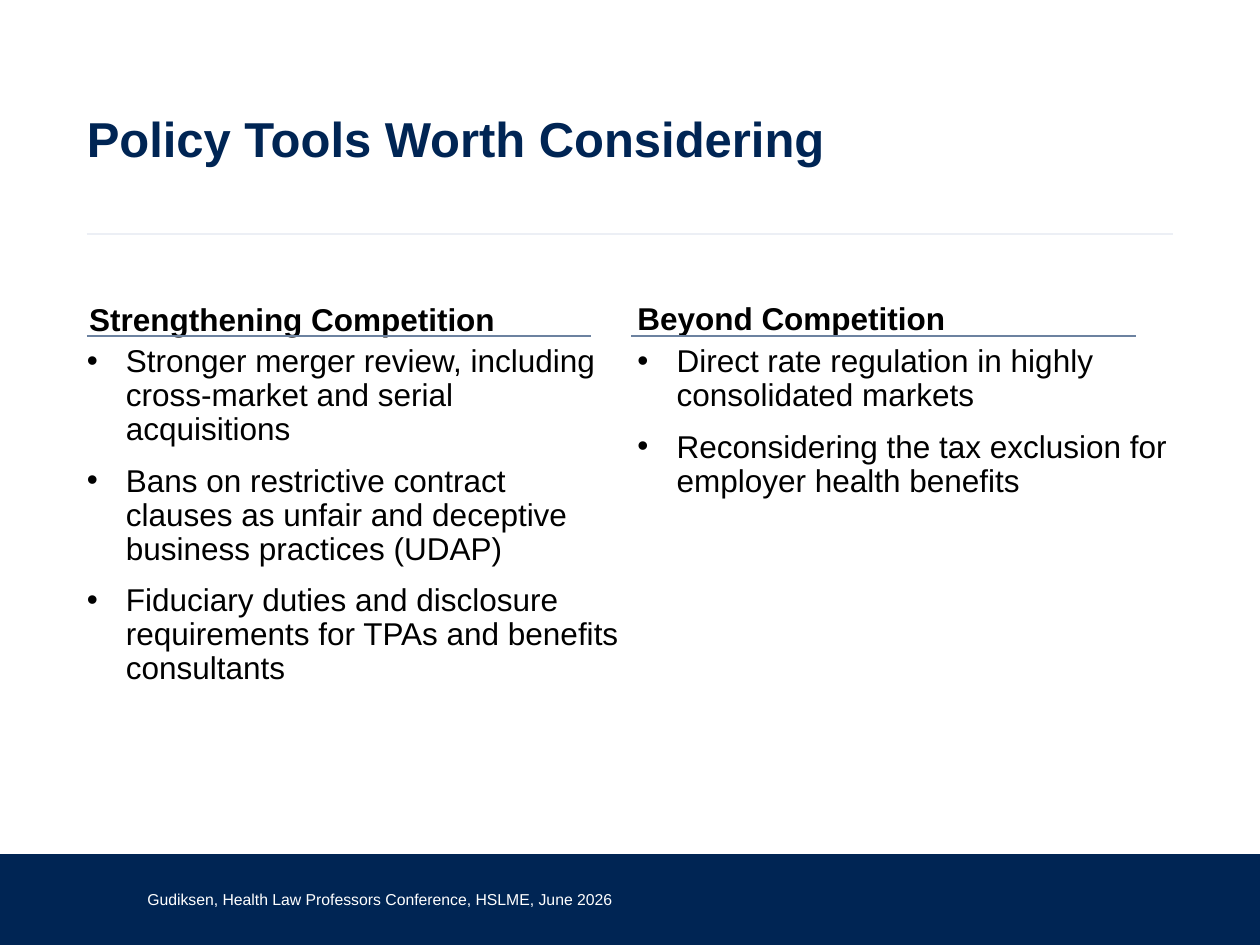
from lxml.etree import SubElement
from pptx import Presentation
from pptx.dml.color import RGBColor
from pptx.enum.shapes import MSO_CONNECTOR, MSO_SHAPE
from pptx.enum.text import MSO_ANCHOR, MSO_AUTO_SIZE, PP_ALIGN
from pptx.oxml.ns import qn
from pptx.util import Cm, Pt

COLORS = {"navy": "002554", "white": "FFFFFF", "black": "000000",
          "slate": "6C82A0", "pale": "ECEFF5"}
FONT = "Arial"
MARGIN = 1.75
RULE_TOP = 6.78
BODY_TOP = 6.96
COLUMNS = [
    {"heading": "Strengthening Competition", "heading_at": (1.8, 5.94),
     "body_left": MARGIN, "rule_left": MARGIN, "width": 10.74,
     "items": ["Stronger merger review, including cross-market and serial acquisitions",
               "Bans on restrictive contract clauses as unfair and deceptive business practices (UDAP)",
               "Fiduciary duties and disclosure requirements for TPAs and benefits consultants"]},
    {"heading": "Beyond Competition", "heading_at": (12.85, 5.92),
     "body_left": 12.85, "rule_left": 12.73, "width": 10.8,
     "items": ["Direct rate regulation in highly consolidated markets",
               "Reconsidering the tax exclusion for employer health benefits"]},
]


def color(name):
    return RGBColor.from_string(COLORS[name])


def write_paragraph(paragraph, text, size=18, ink="black", bold=False, bullet=False, before=0):
    paragraph.alignment = PP_ALIGN.LEFT
    paragraph.line_spacing = 0.9
    paragraph.space_before = Pt(before)
    if bullet:
        properties = paragraph._p.get_or_add_pPr()
        properties.set("marL", str(Cm(0.79)))
        properties.set("indent", str(-Cm(0.79)))
        SubElement(properties, qn("a:buFont"), typeface=FONT)
        SubElement(properties, qn("a:buChar"), char="•")
    run = paragraph.add_run()
    run.text = text
    run.font.name = FONT
    run.font.size = Pt(size)
    run.font.bold = bold
    run.font.color.rgb = color(ink)


class SlideBuilder:
    """Holds the current slide and adds styled elements to it."""

    def __init__(self, slide):
        self.slide = slide

    def fill_frame(self, shape, texts, anchor=MSO_ANCHOR.TOP, side=0, **style):
        frame = shape.text_frame
        frame.word_wrap = True
        frame.auto_size = MSO_AUTO_SIZE.NONE
        frame.vertical_anchor = anchor
        frame.margin_left = frame.margin_right = Cm(side)
        frame.margin_top = frame.margin_bottom = Cm(0.13)
        if anchor == MSO_ANCHOR.TOP:
            frame.margin_top = 0
        for index, text in enumerate(texts):
            paragraph = frame.add_paragraph() if index else frame.paragraphs[0]
            write_paragraph(paragraph, text, before=10 if index else 0, **style)

    def title(self, text, left, top, width, height):
        shape = self.slide.shapes.title
        shape.left, shape.top, shape.width, shape.height = map(Cm, (left, top, width, height))
        self.fill_frame(shape, [text], anchor=MSO_ANCHOR.MIDDLE, size=28, ink="navy", bold=True)

    def text(self, texts, left, top, width, height, **style):
        shape = self.slide.shapes.add_textbox(*map(Cm, (left, top, width, height)))
        self.fill_frame(shape, texts, **style)

    def band(self, left, top, width, height):
        shape = self.slide.shapes.add_shape(MSO_SHAPE.RECTANGLE, *map(Cm, (left, top, width, height)))
        shape.shadow.inherit = False
        shape.fill.solid()
        shape.fill.fore_color.rgb = color("navy")
        shape.line.fill.background()

    def rule(self, left, top, width, ink, weight):
        line = self.slide.shapes.add_connector(
            MSO_CONNECTOR.STRAIGHT, *map(Cm, (left, top, left + width, top)))
        line.line.color.rgb = color(ink)
        line.line.width = Pt(weight)
        SubElement(line._element.spPr, qn("a:effectLst"))


def main():
    presentation = Presentation()
    presentation.slide_width, presentation.slide_height = Cm(25.4), Cm(19.05)
    builder = SlideBuilder(presentation.slides.add_slide(presentation.slide_layouts[5]))
    builder.band(0, 17.22, 25.4, 1.83)
    builder.rule(MARGIN, 4.72, 21.9, "pale", 1)
    builder.title("Policy Tools Worth Considering", MARGIN, 1.02, 21.9, 3.68)
    for column in COLUMNS:
        builder.text([column["heading"]], *column["heading_at"], column["width"], 1.02,
                     anchor=MSO_ANCHOR.BOTTOM, bold=True)
        builder.text(column["items"], column["body_left"], BODY_TOP, column["width"], 10.24,
                     bullet=True)
        builder.rule(column["rule_left"], RULE_TOP, 10.17, "slate", 1.25)
    builder.text(["Gudiksen, Health Law Professors Conference, HSLME, June 2026"],
                 2.72, 17.65, 9.98, 1.02, anchor=MSO_ANCHOR.MIDDLE, side=0.25,
                 size=9, ink="white")
    presentation.save("out.pptx")


if __name__ == "__main__":
    main()
